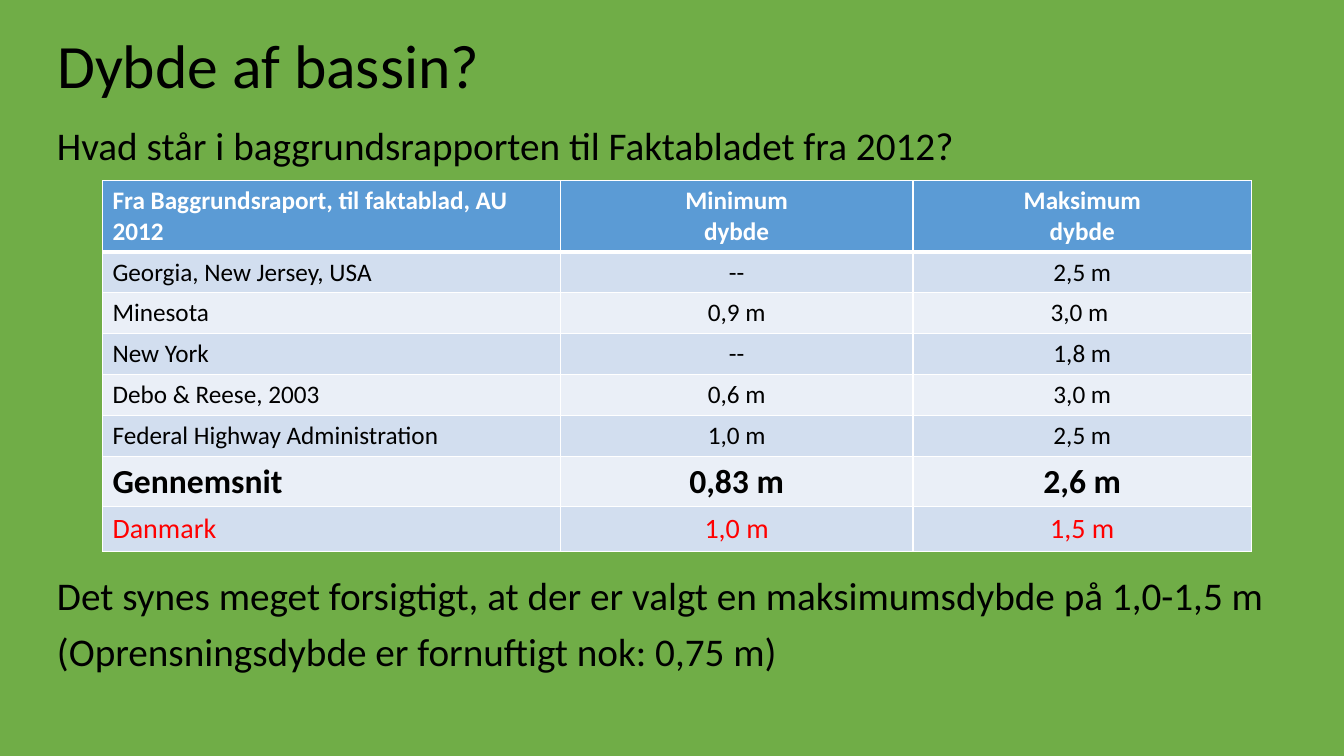
from lxml import etree
from pptx import Presentation, util as u
from pptx.dml import color
from pptx.enum import text
from pptx.oxml import ns

COLORS = {"bg": "70AD47", "ink": "000000", "white": "FFFFFF", "header": "5B9BD5",
          "band_dark": "D2DEEF", "band_light": "EAEFF7", "alert": "FF0000"}
COLS, ROWS = 160, 90

QUESTION = "Hvad står i baggrundsrapporten til Faktabladet fra 2012?"
CONCLUSIONS = ["Det synes meget forsigtigt, at der er valgt en maksimumsdybde på 1,0-1,5 m",
               "(Oprensningsdybde er fornuftigt nok: 0,75 m)"]
DEPTHS = [
    ("Fra Baggrundsraport, til faktablad, AU 2012", "Minimum\ndybde", "Maksimum\ndybde"),
    ("Georgia, New Jersey, USA", "--", "2,5 m"),
    ("Minesota", "0,9 m", "3,0 m "),
    ("New York", "--", "1,8 m"),
    ("Debo & Reese, 2003", "0,6 m", "3,0 m"),
    ("Federal Highway Administration", "1,0 m", "2,5 m"),
    ("Gennemsnit", "0,83 m", "2,6 m"),
    ("Danmark", "1,0 m", "1,5 m"),
]
ROW_STYLES = [(18, "white", True)] + [(18, "ink", False)] * 5 + [
    (24, "ink", True), (20, "alert", False)]


def rgb(name):
    return color.RGBColor.from_string(COLORS[name])


class Deck:
    font = "Calibri"

    def __init__(self):
        self.prs = Presentation()
        self.prs.slide_width, self.prs.slide_height = u.Inches(13.33), u.Inches(7.5)
        self.s = self.prs.slides.add_slide(self.prs.slide_layouts[5])
        self.s.background.fill.solid()
        self.s.background.fill.fore_color.rgb = rgb("bg")

    def x(self, cols):
        return round(self.prs.slide_width * cols / COLS)

    def y(self, rows):
        return round(self.prs.slide_height * rows / ROWS)

    def box(self, col, row, cols, rows):
        return self.x(col), self.y(row), self.x(cols), self.y(rows)

    def format(self, tf, size, ink="ink", bold=False, align=text.PP_ALIGN.LEFT, spacing=None):
        for p in tf.paragraphs:
            p.alignment = align
            p.line_spacing = spacing
            for r in p.runs:
                r.font.name, r.font.size, r.font.bold = self.font, u.Pt(size), bold
                r.font.color.rgb = rgb(ink)

    def title(self, words, *area):
        sp = self.s.shapes.title
        sp.left, sp.top, sp.width, sp.height = self.box(*area)
        tf = sp.text_frame
        tf.text = words
        tf.auto_size = text.MSO_AUTO_SIZE.NONE
        tf.vertical_anchor = text.MSO_ANCHOR.MIDDLE
        self.format(tf, 44, spacing=0.9)

    def body(self, lines, gaps, *area):
        tf = self.s.shapes.add_textbox(*self.box(*area)).text_frame
        tf.word_wrap = True
        tf.text = "\n".join(lines)
        self.format(tf, 28, spacing=0.9)
        for p, gap in zip(tf.paragraphs, gaps):
            p.space_before = u.Pt(gap)

    def borders(self, cell, widths):
        tcPr = cell._tc.get_or_add_tcPr()
        for side, width in zip("LRTB", widths):
            ln = etree.SubElement(tcPr, ns.qn(f"a:ln{side}"), w=str(u.Pt(width)))
            fill = etree.SubElement(ln, ns.qn("a:solidFill"))
            etree.SubElement(fill, ns.qn("a:srgbClr"), val=COLORS["white"])

    def table(self, rows, styles, col, row, widths, heights):
        area = self.box(col, row, sum(widths), sum(heights))
        tbl = self.s.shapes.add_table(len(rows), len(widths), *area).table
        for column, width in zip(tbl.columns, widths):
            column.width = self.x(width)
        for i, (words, style) in enumerate(zip(rows, styles)):
            tbl.rows[i].height = self.y(heights[i])
            fill = "header" if i == 0 else "band_dark" if i % 2 else "band_light"
            for j, word in enumerate(words):
                cell = tbl.cell(i, j)
                cell.text_frame.text = word
                align = text.PP_ALIGN.CENTER if j else text.PP_ALIGN.LEFT
                self.format(cell.text_frame, *style, align=align)
                self.borders(cell, (1, 1, 3 if i == 1 else 1, 3 if i == 0 else 1))
                cell.fill.solid()
                cell.fill.fore_color.rgb = rgb(fill)


def main():
    deck = Deck()
    deck.title("Dybde af bassin?", 5.6, 1.7, 138, 12.85)
    deck.body([QUESTION] + CONCLUSIONS, (0, 291, 10), 5.6, 14.5, 149.6, 67.5)
    deck.table(DEPTHS, ROW_STYLES, 12.2, 21.5, (54.5, 42, 40.3),
               [8.5] + [4.87] * 5 + [6, 5.3])
    deck.prs.save("out.pptx")


if __name__ == "__main__":
    main()
